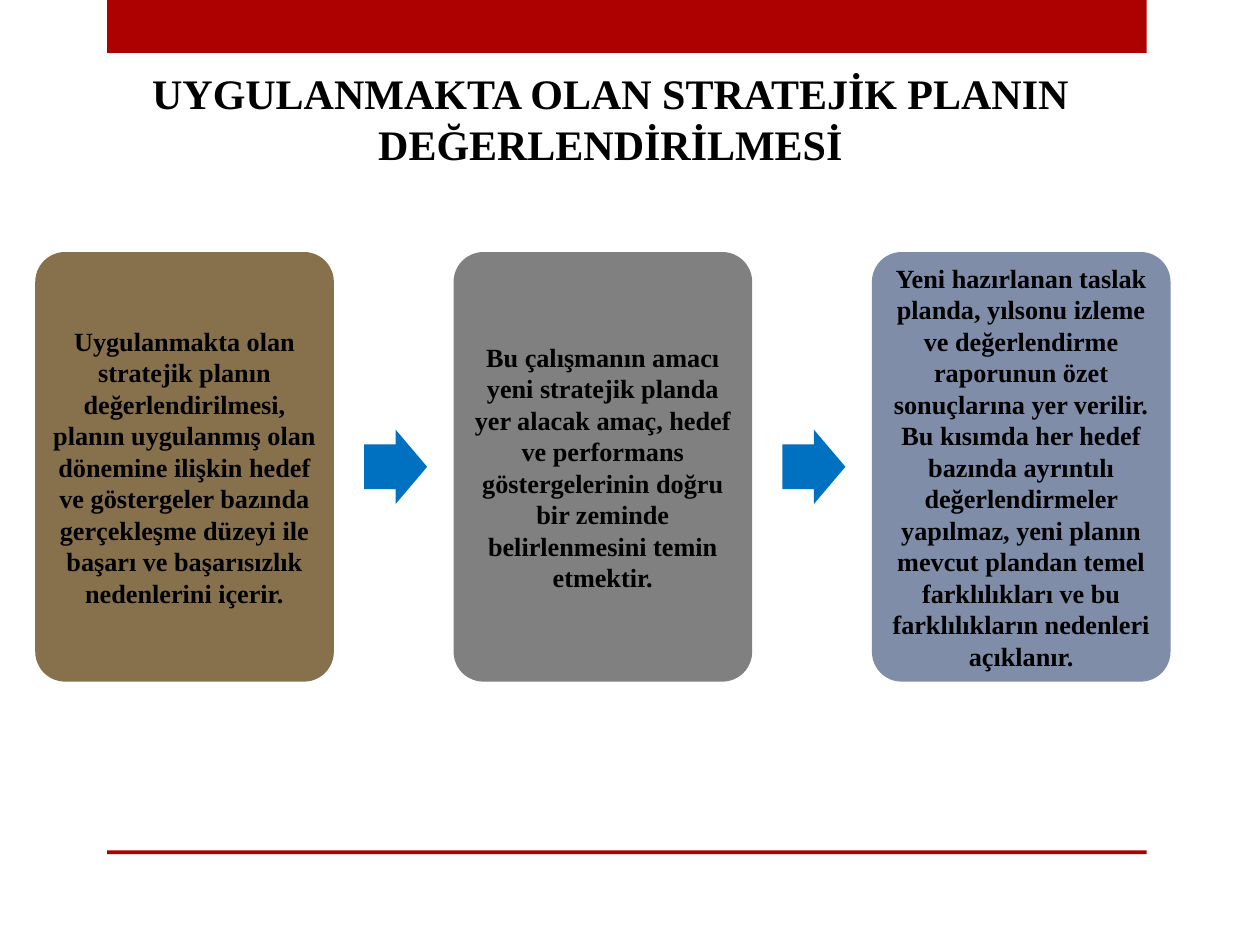
from pptx import Presentation
from pptx.dml.color import RGBColor
from pptx.enum.shapes import MSO_SHAPE
from pptx.enum.text import MSO_ANCHOR, PP_ALIGN
from pptx.util import Inches, Pt

RED = RGBColor(0xAD, 0x01, 0x01)
BROWN = RGBColor(0x87, 0x71, 0x4D)
GRAY = RGBColor(0x80, 0x80, 0x80)
SLATE = RGBColor(0x80, 0x8D, 0xA9)
BLUE = RGBColor(0x00, 0x70, 0xC0)
BLACK = RGBColor(0x00, 0x00, 0x00)

# Columns and rows of the three-step flow, in inches
FIRST_LEFT, COLUMN_STEP = 0.28, 3.32
BOX_TOP, BOX_WIDTH, BOX_HEIGHT = 2, 2.37, 3.41
ARROW_OFFSET, ARROW_WIDTH, ARROW_HEIGHT = 2.61, 0.5, 0.59
BOX_INSET = Inches(0.06)

STEPS = [
    ("Uygulanmakta olan stratejik planın değerlendirilmesi, planın uygulanmış "
     "olan dönemine ilişkin hedef ve göstergeler bazında gerçekleşme düzeyi ile "
     "başarı ve başarısızlık nedenlerini içerir.", BROWN),
    ("Bu çalışmanın amacı yeni stratejik planda yer alacak amaç, hedef ve "
     "performans göstergelerinin doğru bir zeminde belirlenmesini temin "
     "etmektir.", GRAY),
    ("Yeni hazırlanan taslak planda, yılsonu izleme ve değerlendirme raporunun "
     "özet sonuçlarına yer verilir. Bu kısımda her hedef bazında ayrıntılı "
     "değerlendirmeler yapılmaz, yeni planın mevcut plandan temel farklılıkları "
     "ve bu farklılıkların nedenleri açıklanır.", SLATE),
]

presentation = Presentation()
presentation.slide_width = Inches(10)
presentation.slide_height = Inches(7.5)
slide = presentation.slides.add_slide(presentation.slide_layouts[6])


def add_flat_shape(kind, left, top, width, height, color):
    """Add a filled shape without outline or shadow; lengths in inches."""
    shape = slide.shapes.add_shape(
        kind, Inches(left), Inches(top), Inches(width), Inches(height))
    shape.shadow.inherit = False
    shape.fill.solid()
    shape.fill.fore_color.rgb = color
    shape.line.fill.background()
    return shape


def write_bold_centered(text_frame, text, size):
    text_frame.word_wrap = True
    text_frame.text = text
    paragraph = text_frame.paragraphs[0]
    paragraph.alignment = PP_ALIGN.CENTER
    font = paragraph.runs[0].font
    font.name = "Times New Roman"
    font.size = Pt(size)
    font.bold = True
    font.color.rgb = BLACK


# Red bands at the top and bottom
for top, height in [(0, 0.42), (6.75, 0.03)]:
    add_flat_shape(MSO_SHAPE.RECTANGLE, 0.85, top, 8.25, height, RED)

title = slide.shapes.add_textbox(
    Inches(0.83), Inches(0.49), Inches(8.03), Inches(0.91))
write_bold_centered(
    title.text_frame, "UYGULANMAKTA OLAN STRATEJİK PLANIN DEĞERLENDİRİLMESİ", 24)

# Step boxes, with an arrow after each but the last
for index, (text, color) in enumerate(STEPS):
    left = FIRST_LEFT + index * COLUMN_STEP
    box = add_flat_shape(MSO_SHAPE.ROUNDED_RECTANGLE,
                         left, BOX_TOP, BOX_WIDTH, BOX_HEIGHT, color)
    box.adjustments[0] = 0.1
    frame = box.text_frame
    frame.margin_left = frame.margin_right = BOX_INSET
    frame.margin_top = frame.margin_bottom = BOX_INSET
    frame.vertical_anchor = MSO_ANCHOR.MIDDLE
    write_bold_centered(frame, text, 15)

    if index < len(STEPS) - 1:
        arrow_top = BOX_TOP + (BOX_HEIGHT - ARROW_HEIGHT) / 2
        arrow = add_flat_shape(MSO_SHAPE.RIGHT_ARROW, left + ARROW_OFFSET,
                               arrow_top, ARROW_WIDTH, ARROW_HEIGHT, BLUE)
        arrow.adjustments[0] = 0.6
        arrow.adjustments[1] = 0.5

presentation.save("out.pptx")
